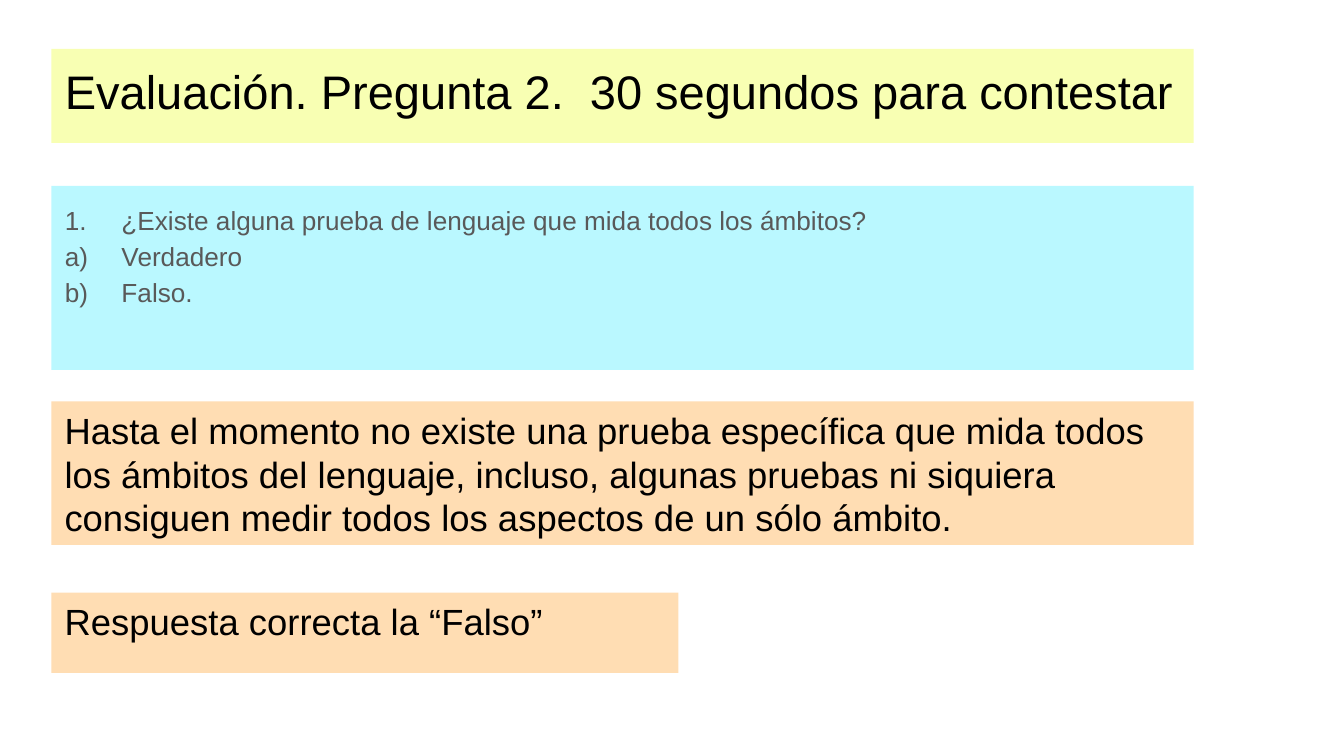
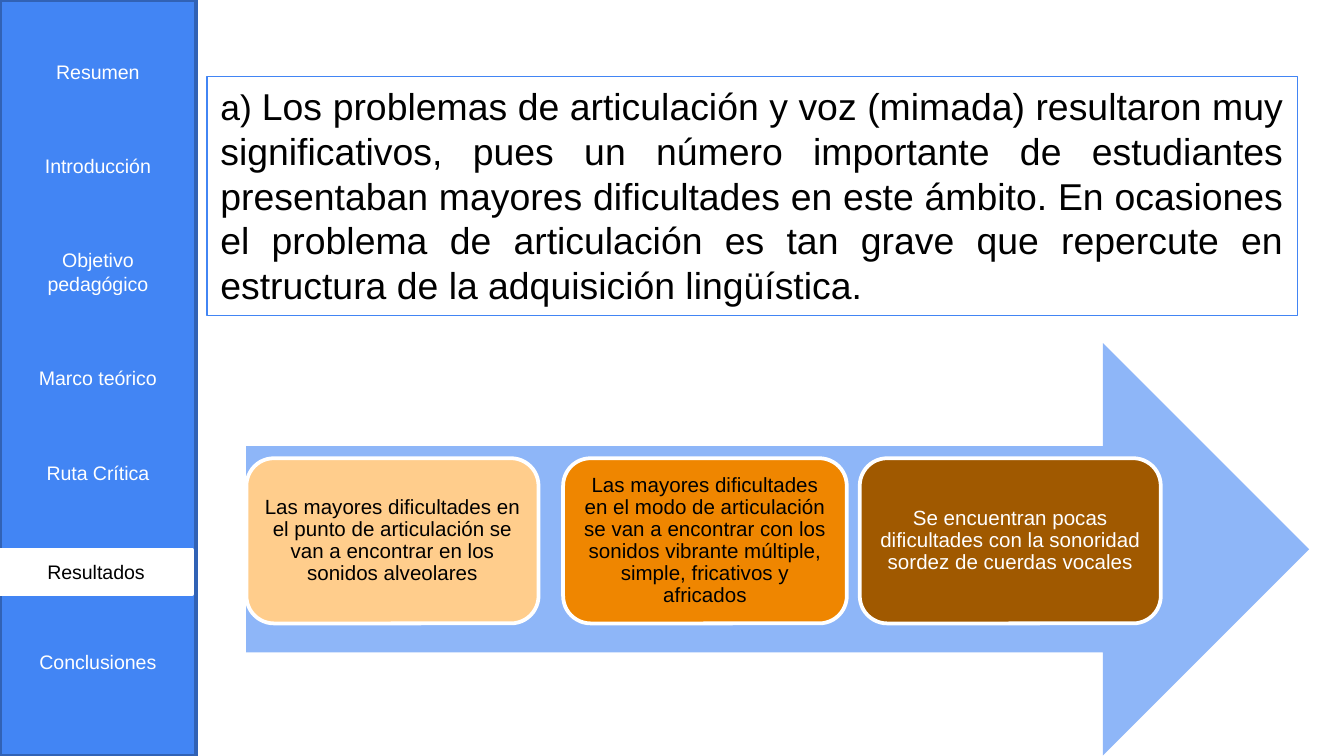
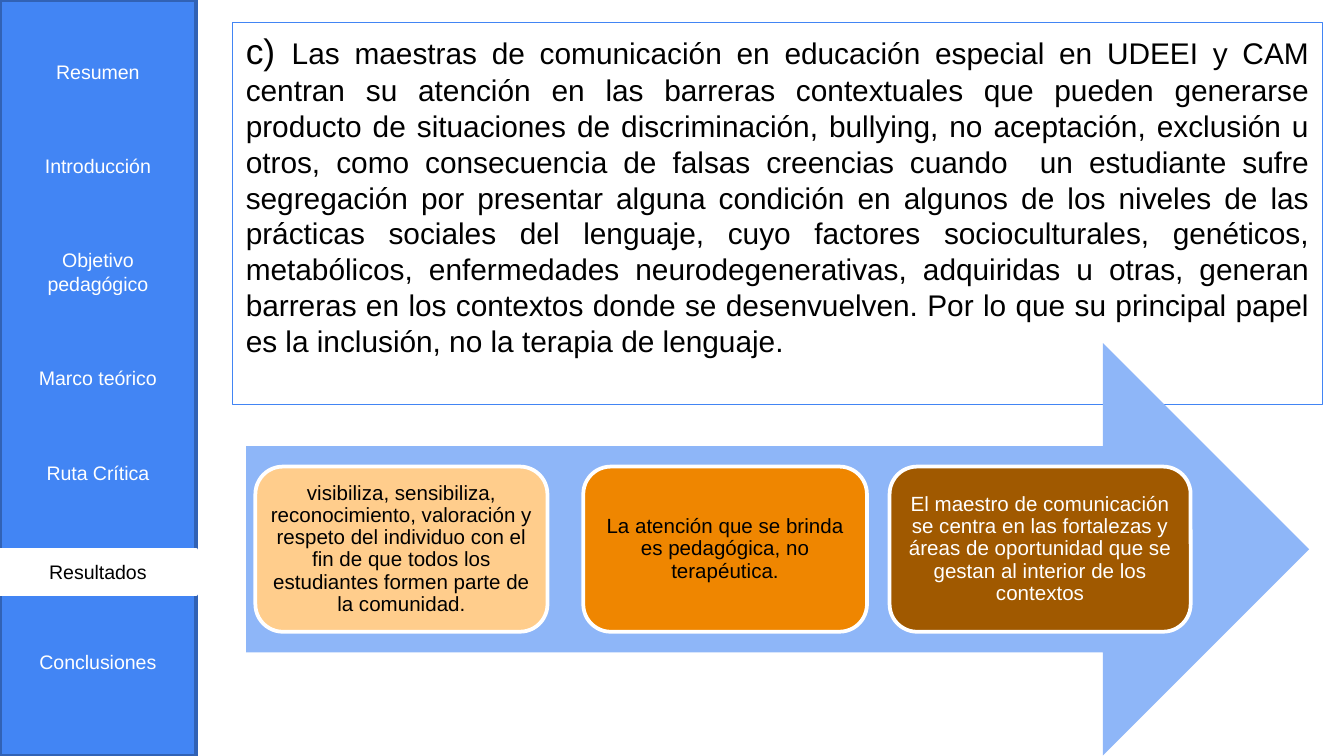
from dataclasses import dataclass

from pptx import Presentation
from pptx.dml.color import RGBColor
from pptx.enum import shapes, text
from pptx.oxml.ns import qn
from pptx.util import Pt
from lxml import etree

# Content: question slide
QUESTION_TITLE = "Evaluación. Pregunta 2.  30 segundos para contestar"
QUESTION_LINES = [
    ("¿Existe alguna prueba de lenguaje que mida todos los ámbitos?", "arabicPeriod"),
    ("Verdadero", "alphaLcParenR"),
    ("Falso.", "alphaLcParenR"),
]
ANSWER = "Respuesta correcta la “Falso”"
EXPLANATION = (
    "Hasta el momento no existe una prueba específica que mida todos los ámbitos "
    "del lenguaje, incluso, algunas pruebas ni siquiera consiguen medir todos los "
    "aspectos de un sólo ámbito."
)

# Content: result slides
SECTIONS = ["Resumen", "Introducción", "Objetivo pedagógico", "Marco teórico",
            "Ruta Crítica", "Resultados", "Conclusiones"]
ACTIVE_SECTION = "Resultados"
RESULTS = [
    {
        "marker": "a) ",
        "statement": (
            "Los problemas de articulación y voz (mimada) resultaron muy significativos, "
            "pues un número importante de estudiantes presentaban mayores dificultades en "
            "este ámbito. En ocasiones el problema de articulación es tan grave que "
            "repercute en estructura de la adquisición lingüística."
        ),
        "statement_box": (111, 41, 584, 128.2),
        "statement_size": 20,
        "active_width": 103,
        "findings": [
            "Las mayores dificultades en el punto de articulación se van a encontrar en "
            "los sonidos alveolares",
            "Las mayores dificultades en el modo de articulación se van a encontrar con "
            "los sonidos vibrante múltiple, simple, fricativos y africados",
            "Se encuentran pocas dificultades con la sonoridad sordez de cuerdas vocales",
        ],
        "finding_lefts": (132, 301.7, 460.6),
        "finding_top": 245.5,
    },
    {
        "marker": "c) ",
        "statement": (
            "Las maestras de comunicación en educación especial en UDEEI y CAM centran su "
            "atención en las barreras contextuales que pueden generarse producto de "
            "situaciones de discriminación, bullying, no aceptación, exclusión u otros, "
            "como consecuencia de falsas creencias cuando  un estudiante sufre segregación "
            "por presentar alguna condición en algunos de los niveles de las prácticas "
            "sociales del lenguaje, cuyo factores socioculturales, genéticos, metabólicos, "
            "enfermedades neurodegenerativas, adquiridas u otras, generan barreras en los "
            "contextos donde se desenvuelven. Por lo que su principal papel es la "
            "inclusión, no la terapia de lenguaje."
        ),
        "statement_box": (124.6, 12.2, 584, 204.5),
        "statement_size": 16,
        "active_width": 105,
        "findings": [
            "visibiliza, sensibiliza, reconocimiento, valoración y respeto del individuo "
            "con el fin de que todos los estudiantes formen parte de la comunidad.",
            "La atención que se brinda es pedagógica, no terapéutica.",
            "El maestro de comunicación se centra en las fortalezas y áreas de oportunidad "
            "que se gestan al interior de los contextos",
        ],
        "finding_lefts": (136.8, 312.5, 476.6),
        "finding_top": 250,
    },
]


# Theme: colours and type sizes
@dataclass(frozen=True)
class Theme:
    font: str = "Arial"
    black: str = "000000"
    white: str = "FFFFFF"
    grey: str = "595959"
    blue: str = "4285F4"
    dark_blue: str = "3162B5"
    pale_blue: str = "8EB6F8"
    yellow: str = "F8FFB3"
    cyan: str = "BAF8FF"
    peach: str = "FFDDB3"
    title: float = 25.2
    answer: float = 19.5
    marker: float = 19
    question: float = 14
    finding: float = 11
    section: float = 10.5


THEME = Theme()
SLIDE_W, SLIDE_H = 720, 405
LEFT, WIDTH = 27.5, 612
SIDEBAR_W = 105
SECTION_GAP = 38
ARROW = (131.8, 183.8, 569.5, 221)
FINDING_H = 88.5
# Width, fill and text colour of each finding
FINDING_STYLES = [(156.5, "FFCD8C", THEME.black),
                  (152, "EF8600", THEME.black),
                  (161.3, "A05900", THEME.white)]
SHAPE = shapes.MSO_SHAPE
ALIGN = text.PP_ALIGN
ANCHOR = text.MSO_ANCHOR


# Shared helpers
def paint(shape, fill=None, line=None, line_width=2):
    if fill:
        shape.fill.solid()
        shape.fill.fore_color.rgb = RGBColor.from_string(fill)
    else:
        shape.fill.background()
    if line:
        shape.line.color.rgb = RGBColor.from_string(line)
        shape.line.width = Pt(line_width)
    else:
        shape.line.fill.background()


def style_run(run, size, color):
    run.font.name = THEME.font
    run.font.size = Pt(size)
    run.font.color.rgb = RGBColor.from_string(color)


def write(shape, lines, size, color, align=ALIGN.LEFT, anchor=ANCHOR.TOP,
          margins=(7.2, 3.6, 7.2, 3.6), gap=0, spacing=1.0):
    frame = shape.text_frame
    frame.text = "\n".join(lines)
    frame.word_wrap = True
    frame.auto_size = text.MSO_AUTO_SIZE.NONE
    frame.vertical_anchor = anchor
    (frame.margin_left, frame.margin_top,
     frame.margin_right, frame.margin_bottom) = map(Pt, margins)
    for i, paragraph in enumerate(frame.paragraphs):
        paragraph.alignment = align
        paragraph.line_spacing = spacing
        paragraph.space_before = Pt(gap if i else 0)
        for run in paragraph.runs:
            style_run(run, size, color)
    return frame


def add_block(slide, kind, box, fill=None, line=None, line_width=2):
    block = slide.shapes.add_shape(kind, *map(Pt, box))
    block.shadow.inherit = False
    paint(block, fill, line, line_width)
    return block


def place(placeholder, box, fill):
    (placeholder.left, placeholder.top,
     placeholder.width, placeholder.height) = map(Pt, box)
    paint(placeholder, fill)
    return placeholder


def number(paragraph, scheme, indent, color):
    props = paragraph._p.get_or_add_pPr()
    props.set("marL", str(Pt(indent)))
    props.set("indent", str(-Pt(indent)))
    bullet_color = etree.SubElement(props, qn("a:buClr"))
    etree.SubElement(bullet_color, qn("a:srgbClr")).set("val", color)
    etree.SubElement(props, qn("a:buFont")).set("typeface", THEME.font)
    etree.SubElement(props, qn("a:buAutoNum")).set("type", scheme)


# Slide builders
def build_question(prs):
    slide = prs.slides.add_slide(prs.slide_layouts[1])
    inset = (7.2,) * 4
    title = place(slide.shapes.title, (LEFT, 26.2, WIDTH, 50.4), THEME.yellow)
    write(title, [QUESTION_TITLE], THEME.title, THEME.black, margins=inset)

    question = place(slide.placeholders[1], (LEFT, 99.6, WIDTH, 98.6), THEME.cyan)
    frame = write(question, [line for line, _ in QUESTION_LINES], THEME.question,
                  THEME.grey, margins=inset, spacing=1.15)
    for paragraph, (_, scheme) in zip(frame.paragraphs, QUESTION_LINES):
        number(paragraph, scheme, 30.4, THEME.grey)

    for reply, top, width, height in [(ANSWER, 317.5, 336, 43),
                                      (EXPLANATION, 215, WIDTH, 77)]:
        block = add_block(slide, SHAPE.RECTANGLE, (LEFT, top, width, height), THEME.peach)
        write(block, [reply], THEME.answer, THEME.black)


def add_sidebar(slide, active_width):
    sidebar = add_block(slide, SHAPE.RECTANGLE, (0, 0, SIDEBAR_W, SLIDE_H),
                        THEME.blue, THEME.dark_blue)
    write(sidebar, SECTIONS, THEME.section, THEME.white, ALIGN.CENTER, ANCHOR.MIDDLE,
          margins=(7.2, 3.6, 7.2, 16), gap=SECTION_GAP)
    active = add_block(slide, SHAPE.RECTANGLE, (0, 294.5, active_width, 23.8),
                       THEME.white, THEME.white)
    write(active, [ACTIVE_SECTION], THEME.section, THEME.black, ALIGN.CENTER, ANCHOR.MIDDLE)


def build_result(prs, result):
    slide = prs.slides.add_slide(prs.slide_layouts[6])
    add_sidebar(slide, result["active_width"])

    statement = add_block(slide, SHAPE.RECTANGLE, result["statement_box"],
                          line=THEME.blue, line_width=0.75)
    frame = write(statement, [result["marker"]], THEME.marker, THEME.black, ALIGN.JUSTIFY)
    body = frame.paragraphs[0].add_run()
    body.text = result["statement"]
    style_run(body, result["statement_size"], THEME.black)

    add_block(slide, SHAPE.RIGHT_ARROW, ARROW, THEME.pale_blue)
    for finding, left, (width, fill, color) in zip(
            result["findings"], result["finding_lefts"], FINDING_STYLES):
        card = add_block(slide, SHAPE.ROUNDED_RECTANGLE,
                         (left, result["finding_top"], width, FINDING_H),
                         fill, THEME.white)
        write(card, [finding], THEME.finding, color, ALIGN.CENTER, ANCHOR.MIDDLE,
              margins=(3.6,) * 4, spacing=0.9)


def main():
    prs = Presentation()
    prs.slide_width, prs.slide_height = Pt(SLIDE_W), Pt(SLIDE_H)
    build_question(prs)
    for result in RESULTS:
        build_result(prs, result)
    prs.save("out.pptx")


if __name__ == "__main__":
    main()
